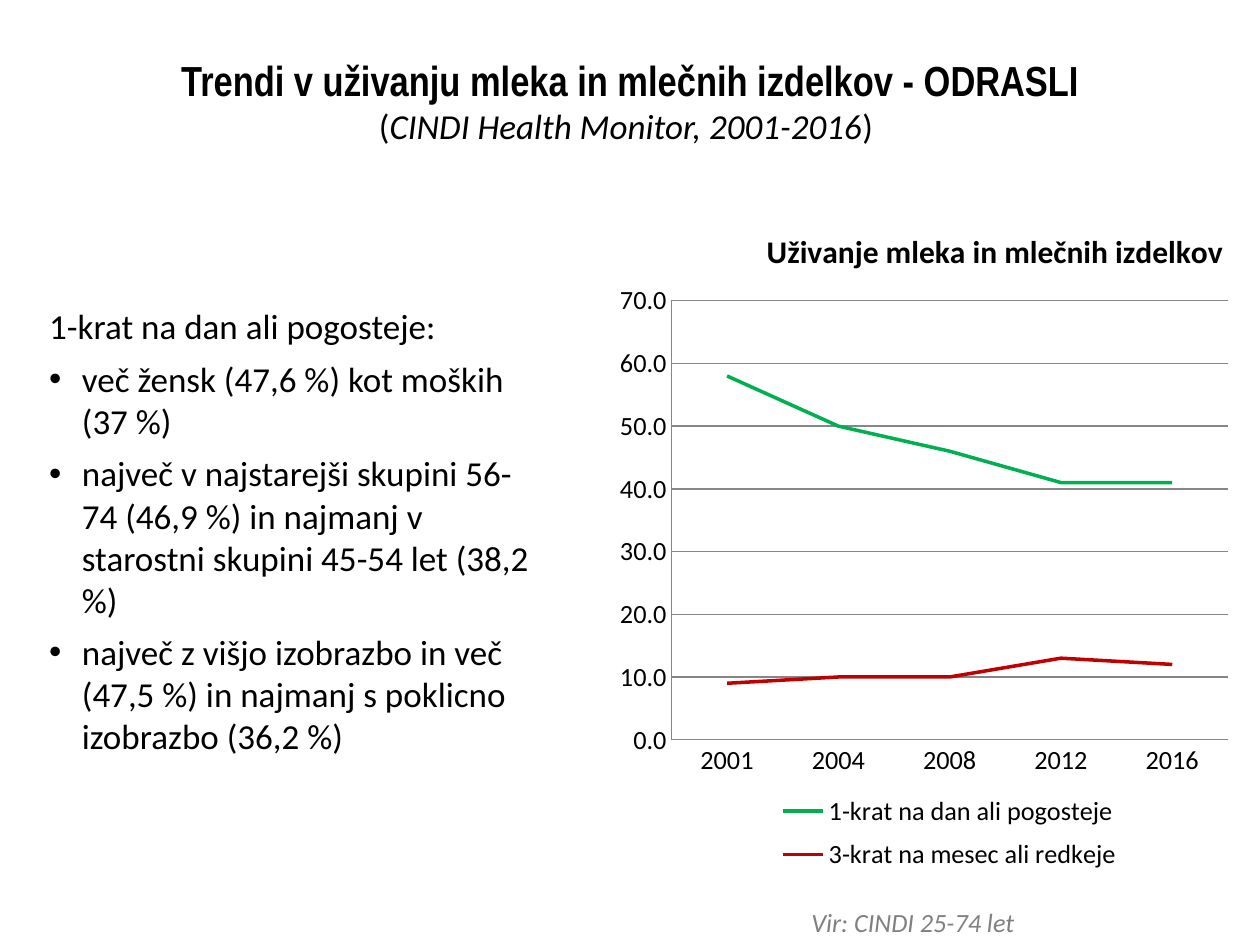
from lxml.etree import SubElement
from pptx import Presentation
from pptx.chart.data import CategoryChartData
from pptx.dml.color import RGBColor
from pptx.enum.chart import XL_CHART_TYPE, XL_LEGEND_POSITION, XL_MARKER_STYLE, XL_TICK_MARK
from pptx.enum.text import PP_ALIGN
from pptx.oxml import parse_xml
from pptx.oxml.ns import nsdecls, qn
from pptx.util import Inches, Pt

BLACK = RGBColor(0x00, 0x00, 0x00)
GRAY = RGBColor(0x80, 0x80, 0x80)
GRID = RGBColor(0x86, 0x86, 0x86)
GREEN = RGBColor(0x00, 0xB0, 0x50)
RED = RGBColor(0xC0, 0x00, 0x00)

FINDINGS = [
    "več žensk (47,6 %) kot moških (37 %)",
    "največ v najstarejši skupini 56-74 (46,9 %) in najmanj v starostni skupini 45-54 let (38,2 %)",
    "največ z višjo izobrazbo in več (47,5 %) in najmanj s poklicno izobrazbo (36,2 %)",
]
YEARS = ["2001", "2004", "2008", "2012", "2016"]
FREQUENCIES = [
    ("1-krat na dan ali pogosteje", [58, 50, 46, 41, 41], GREEN),
    ("3-krat na mesec ali redkeje", [9, 10, 10, 13, 12], RED),
]


def add_frame(slide, box, inset_x, inset_y):
    frame = slide.shapes.add_textbox(*map(Inches, box)).text_frame
    frame.word_wrap = True
    frame.margin_left = frame.margin_right = Inches(inset_x)
    frame.margin_top = frame.margin_bottom = Inches(inset_y)
    return frame


def add_run(paragraph, text, size, color=BLACK, face="Calibri", bold=False, italic=False):
    run = paragraph.add_run()
    run.text = text
    run.font.name = face
    run.font.size = Pt(size)
    run.font.bold = bold
    run.font.italic = italic
    run.font.color.rgb = color


def add_heading(slide, box):
    frame = add_frame(slide, box, 0.1, 0)
    heading = frame.paragraphs[0]
    heading.alignment = PP_ALIGN.CENTER
    add_run(heading, "Trendi v uživanju mleka in mlečnih izdelkov - ODRASLI", 24,
            face="Arial Narrow", bold=True)
    subtitle = frame.add_paragraph()
    subtitle.alignment = PP_ALIGN.CENTER
    add_run(subtitle, "(", 20)
    add_run(subtitle, "CINDI Health Monitor, 2001-2016", 20, italic=True)
    add_run(subtitle, ") ", 20)


def add_findings(slide, box):
    frame = add_frame(slide, box, 0.04, 0.04)
    add_run(frame.paragraphs[0], "1-krat na dan ali pogosteje:", 20)
    for finding in FINDINGS:
        item = frame.add_paragraph()
        item.space_before = Pt(6)
        properties = item._p.get_or_add_pPr()
        properties.set("marL", str(Inches(0.26)))
        properties.set("indent", str(-Inches(0.26)))
        SubElement(properties, qn("a:buFont")).set("typeface", "Arial")
        SubElement(properties, qn("a:buChar")).set("char", "•")
        add_run(item, finding, 20)


def place(part, x, y, width=None, height=None, inner=False):
    target = '<c:layoutTarget val="inner"/>' if inner else ""
    modes = '<c:xMode val="edge"/><c:yMode val="edge"/>'
    sizes = [("x", x), ("y", y), ("w", width), ("h", height)]
    values = "".join(f'<c:{key} val="{value}"/>' for key, value in sizes if value is not None)
    layout = parse_xml(f'<c:layout {nsdecls("c")}><c:manualLayout>{target}{modes}{values}'
                       '</c:manualLayout></c:layout>')
    for old in part.findall(qn("c:layout")):
        part.remove(old)
    before = [child for child in part if child.tag in (qn("c:tx"), qn("c:legendPos"))]
    part.insert(len(before), layout)


def style_axis(axis):
    axis.major_tick_mark = axis.minor_tick_mark = XL_TICK_MARK.NONE
    axis.format.line.color.rgb = GRID
    axis.format.line.width = Pt(0.75)


def add_trend_chart(slide, box):
    data = CategoryChartData(number_format="0.0")
    data.categories = YEARS
    for name, shares, _ in FREQUENCIES:
        data.add_series(name, shares)
    chart = slide.shapes.add_chart(XL_CHART_TYPE.LINE, *map(Inches, box), data).chart
    chart.font.name = "Calibri"
    chart.font.size = Pt(15)
    chart.font.color.rgb = BLACK

    chart.has_title = True
    add_run(chart.chart_title.text_frame.paragraphs[0],
            "Uživanje mleka in mlečnih izdelkov", 18, bold=True)
    chart.has_legend = True
    chart.legend.position = XL_LEGEND_POSITION.BOTTOM
    chart.legend.include_in_layout = False
    place(chart.chart_title._element, 0.22, 0)
    place(chart.legend._element, 0.23, 0.84, 0.57, 0.15)
    place(chart._chartSpace.chart.plotArea, 0.08, 0.115, 0.87, 0.66, inner=True)

    style_axis(chart.category_axis)
    shares_axis = chart.value_axis
    style_axis(shares_axis)
    shares_axis.minimum_scale = 0
    shares_axis.maximum_scale = 70
    shares_axis.major_unit = 10
    shares_axis.tick_labels.number_format = "0.0"
    shares_axis.tick_labels.number_format_is_linked = False
    shares_axis.major_gridlines.format.line.color.rgb = GRID
    shares_axis.major_gridlines.format.line.width = Pt(0.75)

    plot = chart.plots[0]
    plot.vary_by_categories = False
    for trend, (_, _, color) in zip(plot.series, FREQUENCIES):
        trend.smooth = False
        trend.marker.style = XL_MARKER_STYLE.NONE
        trend.format.line.color.rgb = color
        trend.format.line.width = Pt(2)


def add_source(slide, box):
    frame = add_frame(slide, box, 0.1, 0.04)
    add_run(frame.paragraphs[0], "Vir: CINDI 25-74 let", 15, GRAY, italic=True)


def main():
    presentation = Presentation()
    presentation.slide_width = Inches(10)
    presentation.slide_height = Inches(7.5)
    slide = presentation.slides.add_slide(presentation.slide_layouts[6])
    add_findings(slide, (0.35, 2.38, 4.02, 3.1))
    add_trend_chart(slide, (4.92, 1.78, 5.08, 5.28))
    add_heading(slide, (0.1, 0.43, 9.8, 1.25))
    add_source(slide, (6.34, 7.15, 2.99, 0.35))
    presentation.save("out.pptx")


if __name__ == "__main__":
    main()
